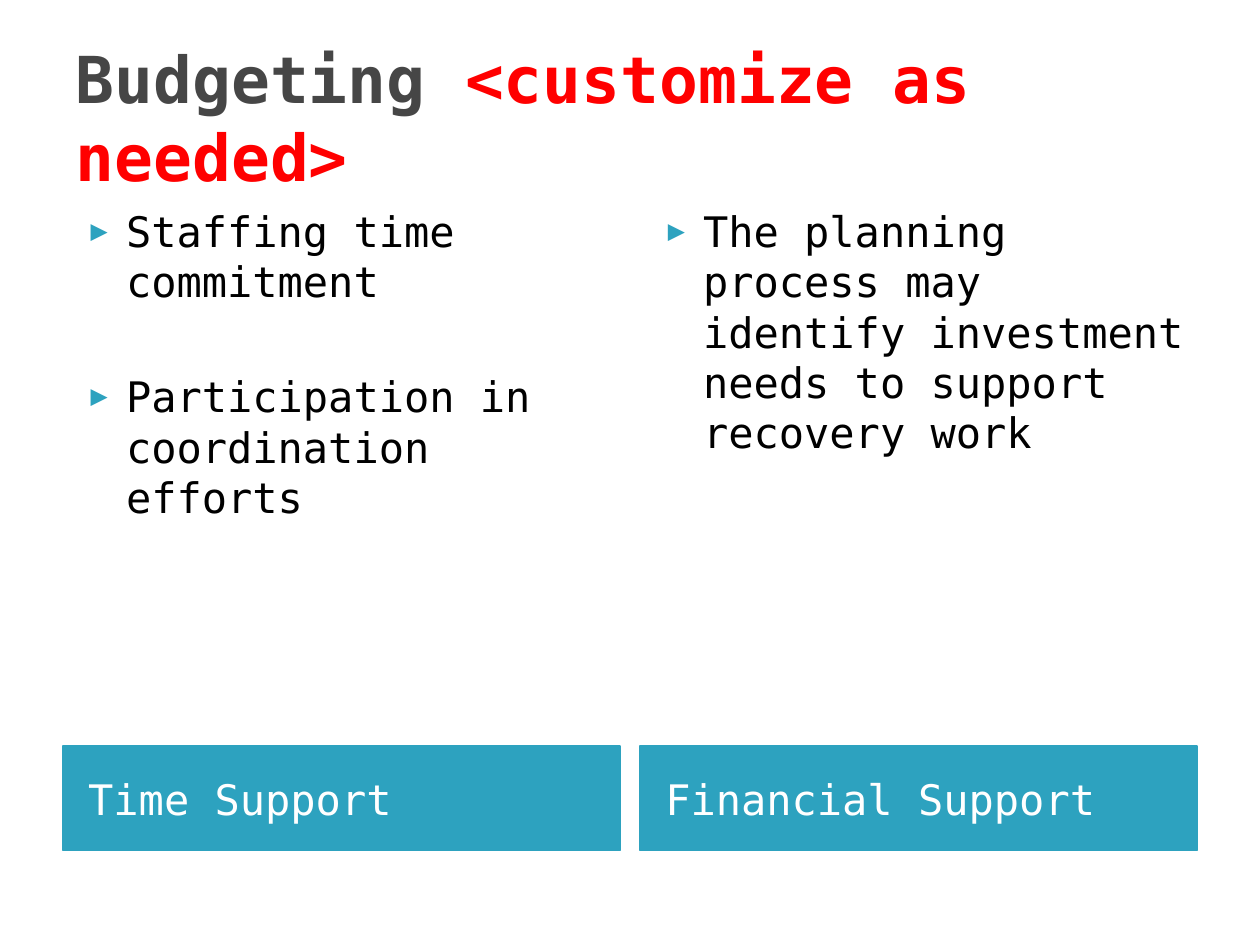
from lxml import etree
from pptx import Presentation
from pptx.dml.color import RGBColor
from pptx.enum.text import MSO_ANCHOR, MSO_AUTO_SIZE, PP_ALIGN
from pptx.oxml.ns import qn
from pptx.util import Inches, Pt

TOP, MIDDLE = MSO_ANCHOR.TOP, MSO_ANCHOR.MIDDLE
LEFT = PP_ALIGN.LEFT
NO_FIT = MSO_AUTO_SIZE.NONE
FONT = "DejaVu Sans Mono"
TEAL = "2DA2BF"
COMPARISON_LAYOUT = 3 + 1
COLUMN_LEFT, COLUMN_WIDTH, COLUMN_STEP = 0.5, 4.42, 4.58
PARAGRAPH_GAP = 37


def color(value):
    return RGBColor.from_string(value)


def add_run(p, text, size=24, fill="000000", bold=False):
    r = p.add_run()
    r.text = text
    r.font.name = FONT
    r.font.size = Pt(size)
    r.font.bold = bold
    r.font.color.rgb = color(fill)


class SlideBuilder:
    def __init__(self, prs):
        self.s = prs.slides.add_slide(prs.slide_layouts[COMPARISON_LAYOUT])

    def place(self, idx, left, top, width, height, anchor):
        sp = self.s.placeholders[idx]
        sp.left, sp.top = Inches(left), Inches(top)
        sp.width, sp.height = Inches(width), Inches(height)
        tf = sp.text_frame
        tf.word_wrap = True
        tf.auto_size = NO_FIT
        tf.vertical_anchor = anchor
        return sp

    def paragraph(self, tf, first=True, gap=0):
        p = tf.paragraphs[0] if first else tf.add_paragraph()
        p.alignment = LEFT
        p.space_before = Pt(0 if first else gap)
        return p

    def title(self, parts):
        sp = self.place(0, 0.5, 0.3, 9, 1.25, MIDDLE)
        p = self.paragraph(sp.text_frame)
        for text, fill in parts:
            add_run(p, text, size=36.9, fill=fill, bold=True)

    def banner(self, idx, left, text):
        sp = self.place(idx, left, 5.92, COLUMN_WIDTH, 0.83, MIDDLE)
        sp.fill.solid()
        sp.fill.fore_color.rgb = color(TEAL)
        sp.line.color.rgb = color(TEAL)
        sp.line.width = Pt(0.75)
        sp.text_frame.margin_left = Inches(0.2)
        add_run(self.paragraph(sp.text_frame), text, fill="FFFFFF")

    def bullet(self, p):
        pPr = p._p.get_or_add_pPr()
        pPr.set("marL", str(Inches(0.4)))
        pPr.set("indent", str(Inches(-0.28)))
        clr = etree.SubElement(pPr, qn("a:buClr"))
        etree.SubElement(clr, qn("a:srgbClr"), val=TEAL)
        etree.SubElement(pPr, qn("a:buSzPct"), val="68000")
        etree.SubElement(pPr, qn("a:buFont"), typeface=FONT)
        etree.SubElement(pPr, qn("a:buChar"), char="▶")

    def bullets(self, idx, left, items):
        sp = self.place(idx, left, 1.58, COLUMN_WIDTH, 4.31, TOP)
        for i, text in enumerate(items):
            p = self.paragraph(sp.text_frame, first=i == 0, gap=PARAGRAPH_GAP)
            self.bullet(p)
            add_run(p, text)


def main():
    prs = Presentation()
    prs.slide_width, prs.slide_height = Inches(10), Inches(7.5)
    slide = SlideBuilder(prs)
    slide.title([("Budgeting ", "464646"), ("<customize as needed>", "FF0000")])
    columns = [
        ("Time Support",
         ["Staffing time commitment", "Participation in coordination efforts"]),
        ("Financial Support",
         ["The planning process may identify investment needs to support recovery work"]),
    ]
    for i, (heading, items) in enumerate(columns):
        left = COLUMN_LEFT + i * COLUMN_STEP
        slide.banner(1 + 2 * i, left, heading)
        slide.bullets(2 + 2 * i, left, items)
    prs.save("out.pptx")


if __name__ == "__main__":
    main()
